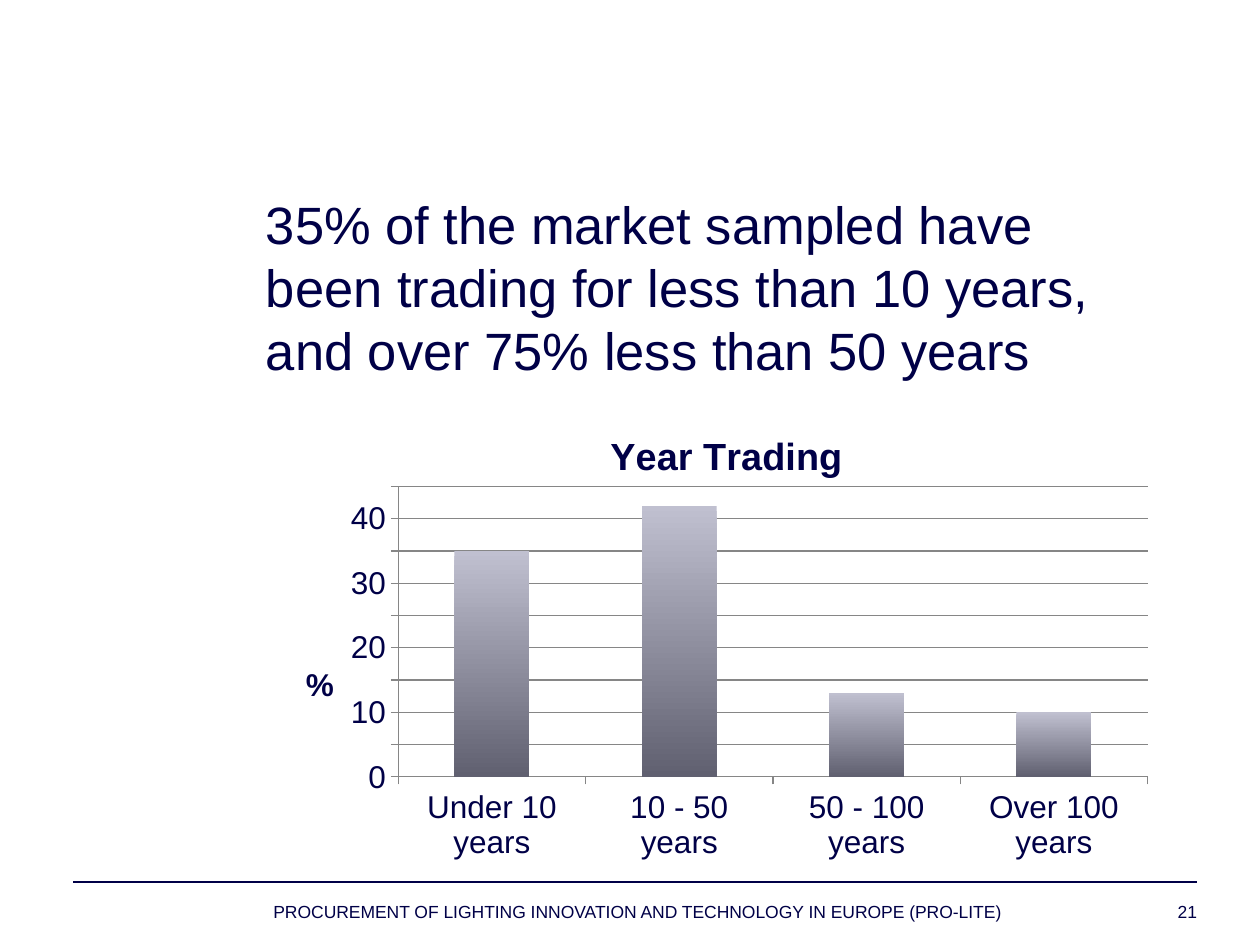
from dataclasses import dataclass

from lxml import etree
from pptx import Presentation
from pptx import util as u
from pptx.chart.data import CategoryChartData
from pptx.dml.color import RGBColor
from pptx.enum import chart as charts, shapes, text
from pptx.oxml import parse_xml
from pptx.oxml.ns import nsdecls, qn


@dataclass(frozen=True)
class Theme:
    """Colours, font and type sizes of the deck."""
    ink: RGBColor = RGBColor(0x00, 0x00, 0x47)
    grid: RGBColor = RGBColor(0x86, 0x86, 0x86)
    bar_top: RGBColor = RGBColor(0xC0, 0xC0, 0xD0)
    bar_foot: RGBColor = RGBColor(0x60, 0x60, 0x70)
    font: str = "Arial"
    headline: float = 30
    leading: float = 36
    chart_title: float = 21.6
    labels: float = 18
    footer: float = 10


THEME = Theme()
WIDTH, HEIGHT = u.Inches(10), u.Inches(7.5)


def area(left, top, width, height):
    """Turn shares of the slide into lengths."""
    return [int(share * side) for share, side in
            zip((left, top, width, height), (WIDTH, HEIGHT) * 2)]


def style(font, size, bold=False):
    """Give a font the theme's face and colour."""
    font.name, font.size, font.bold = THEME.font, u.Pt(size), bold
    font.color.rgb = THEME.ink


def add_text(page, place, words, size, align=text.PP_ALIGN.LEFT, leading=None):
    """Add a text box without margins."""
    frame = page.shapes.add_textbox(*area(*place)).text_frame
    frame.word_wrap = True
    frame.margin_left = frame.margin_top = frame.margin_right = frame.margin_bottom = 0
    para = frame.paragraphs[0]
    para.text, para.alignment = words, align
    if leading:
        para.line_spacing = u.Pt(leading)
    style(para.font, size)


def add_rule(page, left, right, top):
    """Add the horizontal line above the footer."""
    start_x, start_y, end_x, end_y = area(left, top, right, top)
    rule = page.shapes.add_connector(
        shapes.MSO_CONNECTOR.STRAIGHT, start_x, start_y, end_x, end_y)
    rule.line.color.rgb, rule.line.width = THEME.ink, u.Pt(1)
    etree.SubElement(rule._element.spPr, qn("a:effectLst"))


def place_part(part, **shares):
    """Fix a chart part at shares of the chart area."""
    for old in part.findall(qn("c:layout")):
        part.remove(old)
    target = '<c:layoutTarget val="inner"/>' if "w" in shares else ""
    modes = "".join(f'<c:{key}Mode val="edge"/>' for key in "xy")
    values = "".join(f'<c:{key} val="{share}"/>' for key, share in shares.items())
    layout = parse_xml(f'<c:layout {nsdecls("c")}><c:manualLayout>'
                       f'{target}{modes}{values}</c:manualLayout></c:layout>')
    part.insert(0 if part.find(qn("c:tx")) is None else 1, layout)


def set_title(title, words, size, **shares):
    """Write and place a chart or axis title."""
    frame = title.text_frame
    frame.text = words
    style(frame.paragraphs[0].font, size, bold=True)
    frame._txBody.bodyPr.set("rot", "0")
    place_part(title._element, **shares)


def add_columns(page, place, name, data):
    """Add the column chart with gradient bars."""
    source = CategoryChartData()
    source.categories = list(data)
    source.add_series(name, list(data.values()))
    chart = page.shapes.add_chart(
        charts.XL_CHART_TYPE.COLUMN_CLUSTERED, *area(*place), source).chart
    style(chart.font, THEME.labels)
    chart.has_legend = False
    chart.has_title = True
    set_title(chart.chart_title, name, THEME.chart_title, x=0.37, y=0.06)
    values = chart.value_axis
    values.minimum_scale, values.maximum_scale, values.major_unit = 0, 45, 5
    values.has_major_gridlines = True
    set_title(values.axis_title, "%", THEME.labels, x=0.03, y=0.55)
    for axis in (values, chart.category_axis):
        axis.major_tick_mark = charts.XL_TICK_MARK.OUTSIDE
    for line in (values.major_gridlines.format.line, values.format.line,
                 chart.category_axis.format.line):
        line.color.rgb, line.width = THEME.grid, u.Pt(0.75)
    plot = chart.plots[0]
    plot.gap_width, plot.vary_by_categories = 150, False
    fill = plot.series[0].format.fill
    fill.gradient()
    fill.gradient_angle = 270
    for stop, colour in zip(fill.gradient_stops, (THEME.bar_top, THEME.bar_foot)):
        stop.color.rgb = colour
    place_part(chart._chartSpace.chart.plotArea, x=0.14, y=0.19, w=0.84, h=0.61)


def main():
    """Build the slide and save the deck."""
    deck = Presentation()
    deck.slide_width, deck.slide_height = WIDTH, HEIGHT
    page = deck.slides.add_slide(deck.slide_layouts[6])
    add_rule(page, 0.058, 0.95, 0.933)
    add_columns(page, (0.217, 0.419, 0.708, 0.504), "Year Trading", {
        "Under 10 years": 35, "10 - 50 years": 42,
        "50 - 100 years": 13, "Over 100 years": 10})
    add_text(page, (0.211, 0.203, 0.708, 0.083),
             "35% of the market sampled have been trading for less than 10 years,"
             "\vand over 75% less than 50 years",
             THEME.headline, leading=THEME.leading)
    add_text(page, (0.217, 0.953, 0.617, 0.047),
             "PROCUREMENT OF LIGHTING INNOVATION AND TECHNOLOGY IN EUROPE (PRO-LITE)",
             THEME.footer)
    add_text(page, (0.85, 0.953, 0.1, 0.047), "21", THEME.footer, text.PP_ALIGN.RIGHT)
    deck.save("out.pptx")


if __name__ == "__main__":
    main()
